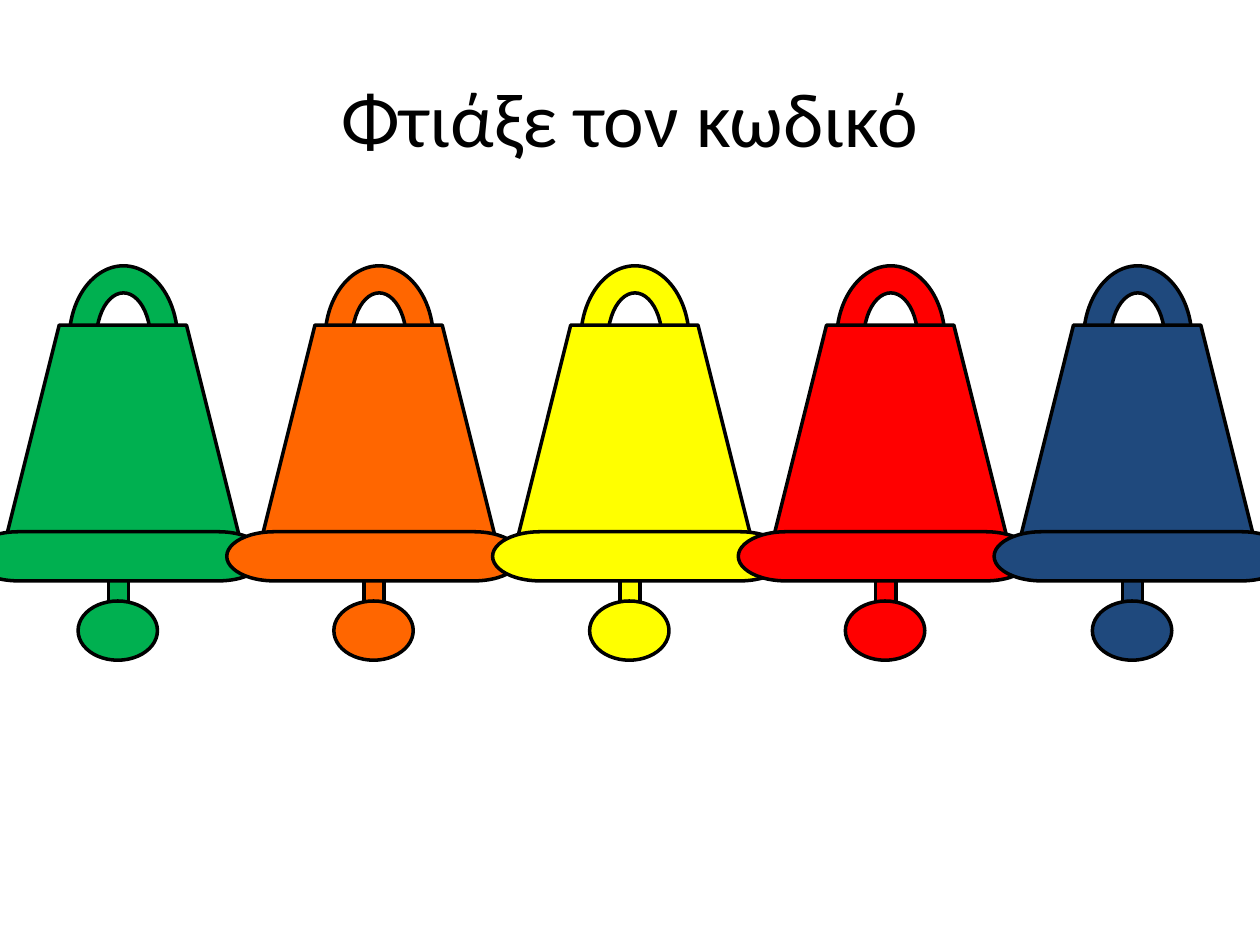
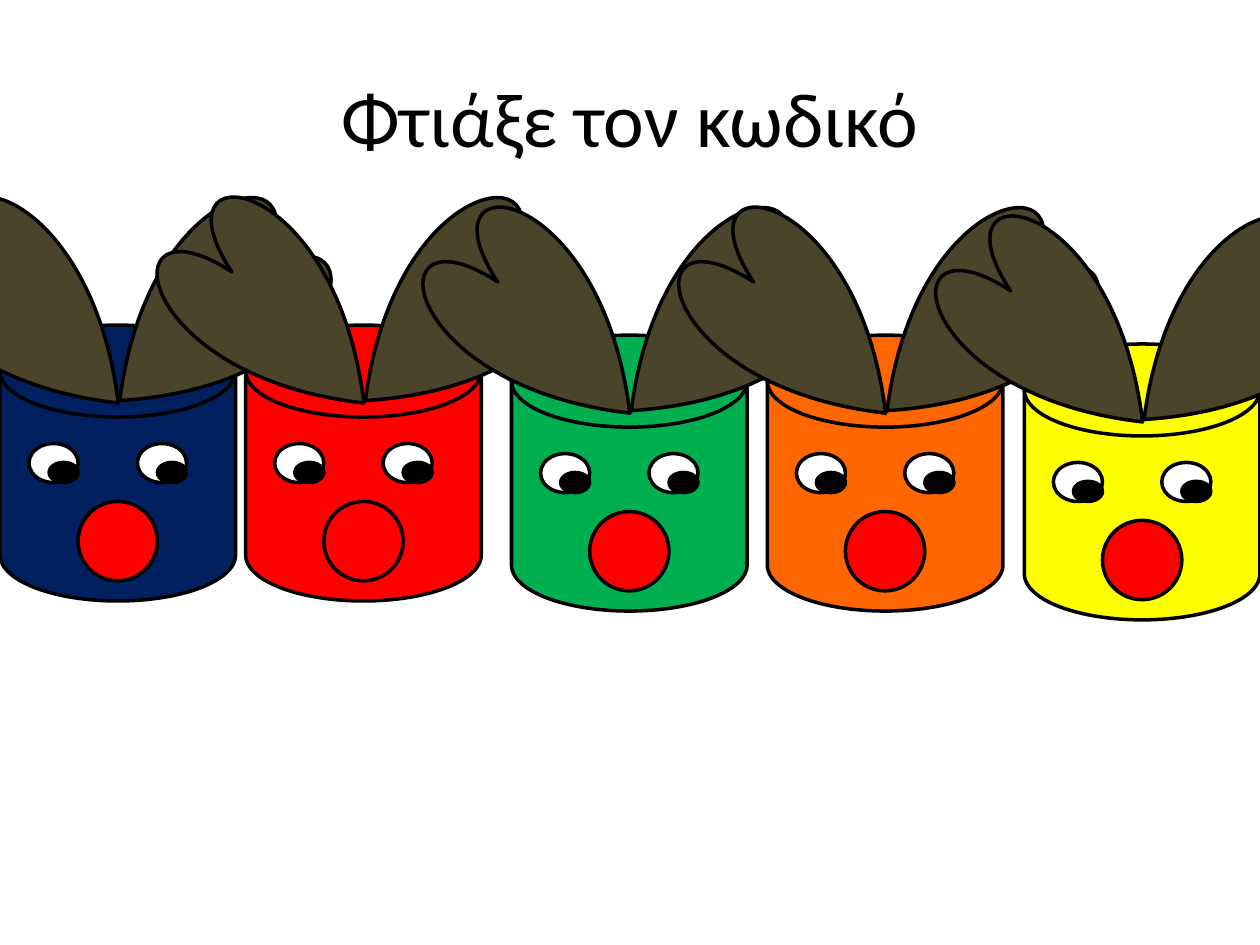
"""Build two code-making slides: a row of bells and a row of reindeer faces."""
from pptx import Presentation
from pptx.dml.color import RGBColor
from pptx.enum.shapes import MSO_SHAPE
from pptx.enum.text import MSO_ANCHOR, PP_ALIGN
from pptx.util import Inches, Pt

STEM = MSO_SHAPE.FLOWCHART_PROCESS
HANDLE = MSO_SHAPE.BLOCK_ARC
BODY = MSO_SHAPE.TRAPEZOID
RIM = MSO_SHAPE.FLOWCHART_TERMINATOR
ROUND = MSO_SHAPE.FLOWCHART_CONNECTOR
HEAD = MSO_SHAPE.FLOWCHART_MAGNETIC_DISK
EAR = MSO_SHAPE.HEART
NOSE = MSO_SHAPE.OVAL
MIDDLE = MSO_ANCHOR.MIDDLE
CENTER = PP_ALIGN.CENTER
TITLE_ONLY = 5

TITLE = "Φτιάξε τον κωδικό"
FONT = "Calibri"
COLORS = {
    "green": "00B050", "orange": "FF6600", "yellow": "FFFF00", "red": "FF0000",
    "blue": "1F497D", "navy": "002060", "brown": "4A452A",
    "black": "000000", "white": "FFFFFF",
}

# Bell: colour, left, rim left. Face: colour, left, top.
BELLS = [
    ("green", 0, -0.23),
    ("orange", 2.03, 1.8),
    ("yellow", 4.06, 3.91),
    ("red", 6.09, 5.86),
    ("blue", 8.05, 7.89),
]
FACES = [
    ("navy", 0, 2.58),
    ("red", 1.95, 2.58),
    ("green", 4.06, 2.66),
    ("orange", 6.09, 2.66),
    ("yellow", 8.13, 2.73),
]

BELL_PARTS = [
    (STEM, 0.86, 3.91, 0.16, 1.02),
    (HANDLE, 0.55, 2.11, 0.86, 1.17),
    (BODY, 0, 2.58, 1.95, 1.88),
    (ROUND, 0.62, 4.77, 0.63, 0.47),
]
RIM_TOP, RIM_WIDTH, RIM_HEIGHT = 4.22, 2.34, 0.39

FACE_PARTS = [
    (EAR, "brown", 1.07, -1.05, 1.19, 1.96, 46.9),
    (EAR, "brown", -0.33, -1.06, 1.14, 1.97, 314.8),
    (ROUND, "white", 0.23, 0.94, 0.39, 0.31, 0),
    (ROUND, "white", 1.09, 0.94, 0.39, 0.31, 0),
    (NOSE, "red", 0.62, 1.4, 0.63, 0.63, 0),
    (ROUND, "black", 0.39, 1.09, 0.23, 0.16, 0),
    (ROUND, "black", 1.25, 1.09, 0.23, 0.16, 0),
]
HEAD_WIDTH, HEAD_HEIGHT = 1.87, 2.19


def rgb(color):
    return RGBColor.from_string(COLORS[color])


def add_part(slide, kind, color, left, top, width, height, rotation=0):
    part = slide.shapes.add_shape(
        kind, Inches(left), Inches(top), Inches(width), Inches(height))
    part.rotation = rotation
    part.shadow.inherit = False
    part.fill.solid()
    part.fill.fore_color.rgb = rgb(color)
    part.line.color.rgb = rgb("black")
    part.line.width = Pt(2)


def add_titled_slide(deck):
    slide = deck.slides.add_slide(deck.slide_layouts[TITLE_ONLY])
    title = slide.shapes.title
    title.left, title.top = Inches(0.5), Inches(0.3)
    title.width, title.height = Inches(9), Inches(1.25)
    title.text_frame.text = TITLE
    title.text_frame.vertical_anchor = MIDDLE
    heading = title.text_frame.paragraphs[0]
    heading.alignment = CENTER
    font = heading.runs[0].font
    font.name, font.size = FONT, Pt(44)
    font.color.rgb = rgb("black")
    return slide


def add_bells(slide):
    for color, bell_left, _ in BELLS:
        for kind, dx, top, width, height in BELL_PARTS:
            add_part(slide, kind, color, bell_left + dx, top, width, height)
    for color, _, rim_left in BELLS:
        add_part(slide, RIM, color, rim_left, RIM_TOP, RIM_WIDTH, RIM_HEIGHT)


def add_faces(slide):
    for color, left, top in FACES:
        add_part(slide, HEAD, color, left, top, HEAD_WIDTH, HEAD_HEIGHT)
        for kind, part_color, dx, dy, width, height, rotation in FACE_PARTS:
            add_part(slide, kind, part_color, left + dx, top + dy,
                     width, height, rotation)


def main():
    deck = Presentation()
    deck.slide_width, deck.slide_height = Inches(10), Inches(7.5)
    for add_row in (add_bells, add_faces):
        add_row(add_titled_slide(deck))
    deck.save("out.pptx")


if __name__ == "__main__":
    main()
